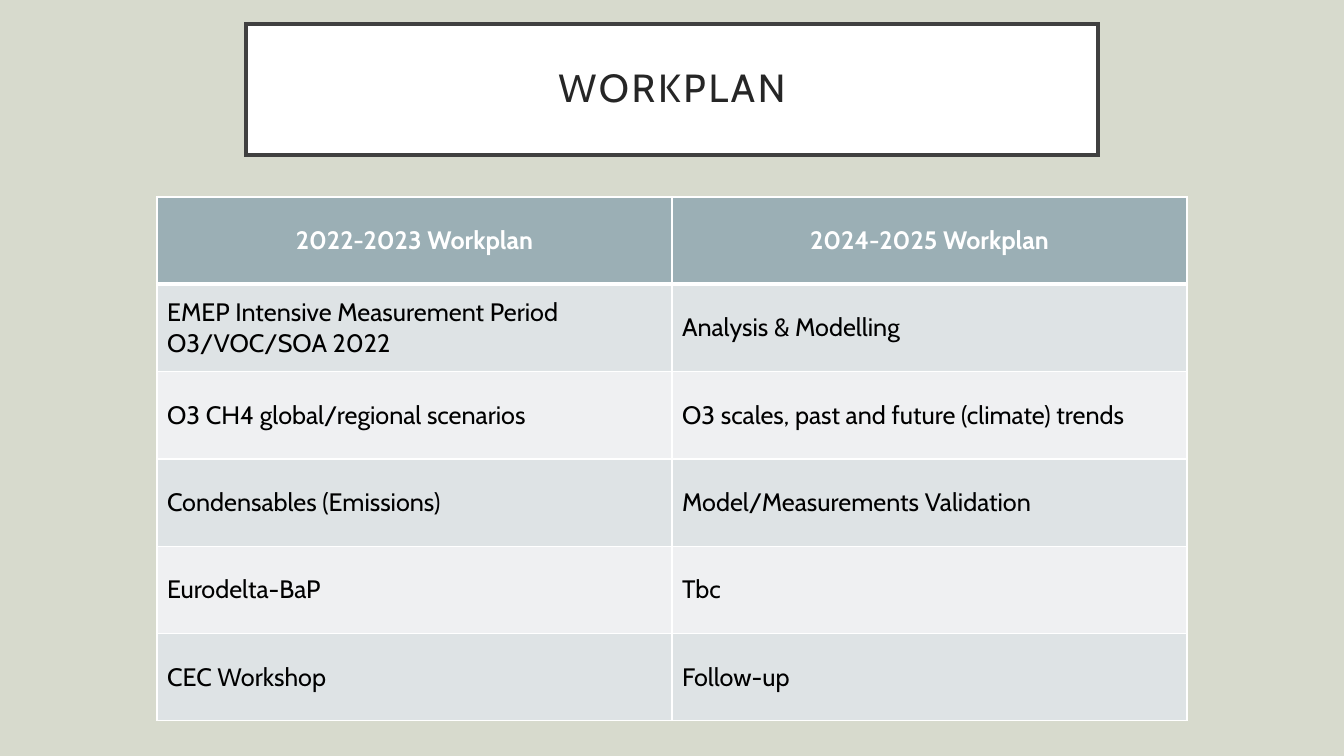
from lxml import etree
from pptx import Presentation
from pptx.dml.color import RGBColor
from pptx.enum.shapes import MSO_SHAPE
from pptx.enum.text import MSO_ANCHOR as Anchor, PP_ALIGN as Align
from pptx.oxml.ns import qn
from pptx.util import Emu, Pt

SLIDE_WIDTH, SLIDE_HEIGHT = 1344, 756
EMU_PER_PX = 12192000 / SLIDE_WIDTH
FONT = "Cabin"
WHITE = "FFFFFF"
HEADER_FILL = "9BAFB5"
BAND_FILLS = ["DEE3E5", "EFF0F2"]
WORKPLAN = [
    ("2022-2023 Workplan", "2024-2025 Workplan"),
    ("EMEP Intensive Measurement Period O3/VOC/SOA 2022", "Analysis & Modelling"),
    ("O3 CH4 global/regional scenarios", "O3 scales, past and future (climate) trends"),
    ("Condensables (Emissions)", "Model/Measurements Validation"),
    ("Eurodelta-BaP", "Tbc"),
    ("CEC Workshop", "Follow-up"),
]


def px(length):
    """Turn pixels into EMU."""
    return Emu(round(length * EMU_PER_PX))


def paint(fill, color):
    """Give a fill one solid colour."""
    fill.solid()
    fill.fore_color.rgb = RGBColor.from_string(color)


def add_run(paragraph, text, size, color, bold=False):
    """Add one styled run to a paragraph."""
    run = paragraph.add_run()
    run.text = text
    run.font.name = FONT
    run.font.size = Pt(size)
    run.font.bold = bold
    paint(run.font.fill, color)
    return run


def add_border(cell, side, width):
    """Draw one white border of a cell."""
    line = etree.SubElement(cell._tc.get_or_add_tcPr(), qn(f"a:ln{side}"), w=str(Pt(width)))
    fill = etree.SubElement(line, qn("a:solidFill"))
    etree.SubElement(fill, qn("a:srgbClr"), val=WHITE)


def add_title(slide, left, top, width, height):
    """Place the framed title."""
    shape = slide.shapes.add_shape(
        MSO_SHAPE.RECTANGLE, px(left), px(top), px(width), px(height))
    shape.shadow.inherit = False
    paint(shape.fill, WHITE)
    paint(shape.line.fill, "404040")
    shape.line.width = Pt(2.5)
    outline = shape._element.spPr.find(qn("a:ln"))
    etree.SubElement(outline, qn("a:miter"), lim="800000")
    frame = shape.text_frame
    frame.word_wrap = True
    frame.vertical_anchor = Anchor.MIDDLE
    frame.margin_left = frame.margin_right = px(20)
    frame.margin_top = frame.margin_bottom = px(20)
    paragraph = frame.paragraphs[0]
    paragraph.alignment = Align.CENTER
    paragraph.line_spacing = 0.9
    run = add_run(paragraph, "WORKPLAN", 28, "262626")
    run.font._element.set("spc", "200")


def fill_cell(cell, text, row):
    """Style one table cell according to its row."""
    header = row == 0
    widths = {"L": 1, "R": 1, "T": 3 if row == 1 else 1, "B": 3 if header else 1}
    for side, width in widths.items():
        add_border(cell, side, width)
    paint(cell.fill, HEADER_FILL if header else BAND_FILLS[(row - 1) % 2])
    cell.vertical_anchor = Anchor.MIDDLE
    paragraph = cell.text_frame.paragraphs[0]
    paragraph.alignment = Align.CENTER if header else Align.LEFT
    add_run(paragraph, text, 18, WHITE if header else "000000", header)


def add_workplan(slide, left, top, width, height):
    """Place the workplan table with equal rows and columns."""
    row_count, column_count = len(WORKPLAN), len(WORKPLAN[0])
    table = slide.shapes.add_table(
        row_count, column_count, px(left), px(top), px(width), px(height)).table
    for column in table.columns:
        column.width = px(width / column_count)
    for row, texts in enumerate(WORKPLAN):
        table.rows[row].height = px(height / row_count)
        for column, text in enumerate(texts):
            fill_cell(table.cell(row, column), text, row)


def main():
    """Build and save the presentation."""
    presentation = Presentation()
    presentation.slide_width = px(SLIDE_WIDTH)
    presentation.slide_height = px(SLIDE_HEIGHT)
    slide = presentation.slides.add_slide(presentation.slide_layouts[6])
    paint(slide.background.fill, "D7DACD")
    add_title(slide, 246, 24, 852, 131)
    add_workplan(slide, 157, 197, 1030, 524)
    presentation.save("out.pptx")


if __name__ == "__main__":
    main()
